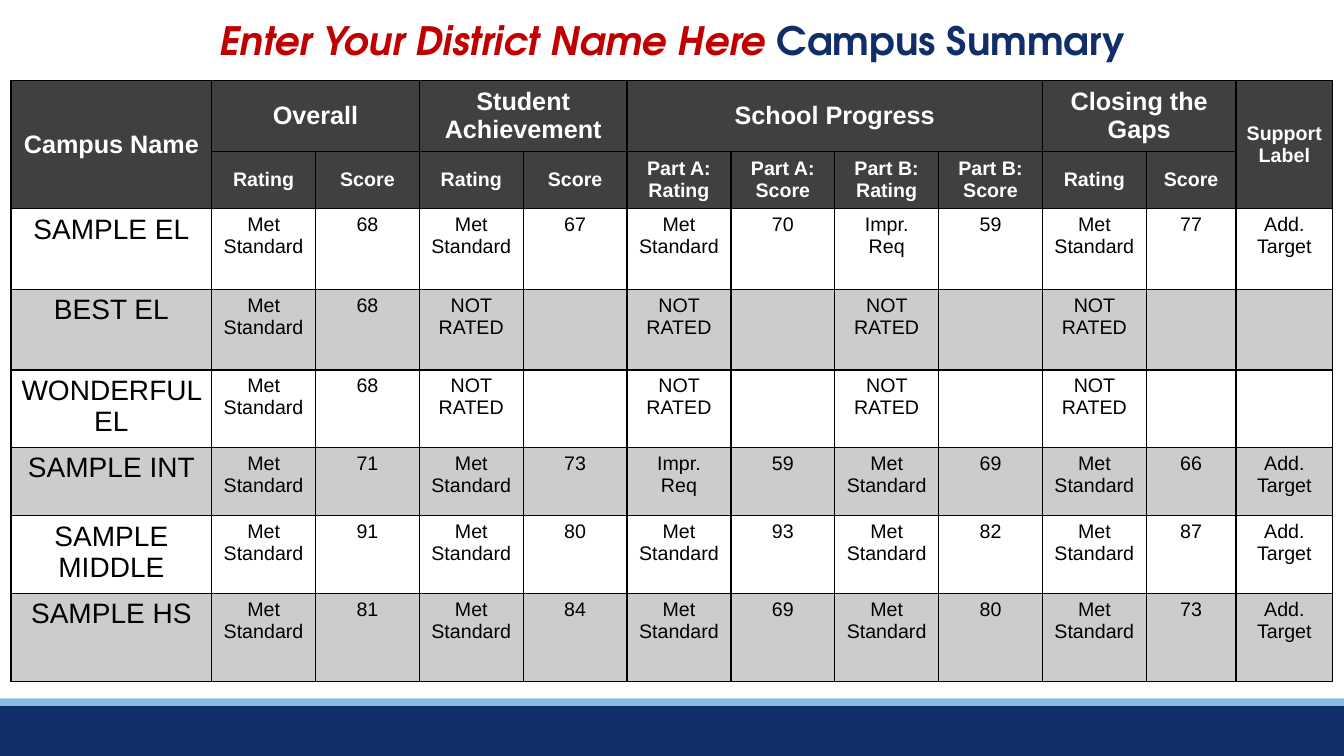
from lxml import etree
from pptx import Presentation
from pptx.dml.color import RGBColor
from pptx.enum.shapes import MSO_SHAPE
from pptx.enum.text import MSO_ANCHOR, PP_ALIGN
from pptx.oxml.ns import qn
from pptx.util import Inches, Pt

RECTANGLE = MSO_SHAPE.RECTANGLE
CENTER = PP_ALIGN.CENTER
TOP, MIDDLE, BOTTOM = MSO_ANCHOR.TOP, MSO_ANCHOR.MIDDLE, MSO_ANCHOR.BOTTOM

NAVY = RGBColor(0x0F, 0x2E, 0x6A)
SKY = RGBColor(0x88, 0xBC, 0xE3)
RED = RGBColor(0xC0, 0x00, 0x00)
CHARCOAL = RGBColor(0x40, 0x40, 0x40)
GRAY = RGBColor(0xCC, 0xCC, 0xCC)
WHITE = RGBColor(0xFF, 0xFF, 0xFF)
BLACK = RGBColor(0x00, 0x00, 0x00)

MET, IMPROVE, UNRATED = "Met Standard", "Impr. Req", "NOT RATED"
TARGET = "Add. Target"
GROUPS = [
    ("Campus Name", 0, 2, 1),
    ("Overall", 1, 1, 2),
    ("Student Achievement", 3, 1, 2),
    ("School Progress", 5, 1, 4),
    ("Closing the Gaps", 9, 1, 2),
    ("Support Label", 11, 2, 1),
]
SUBHEADS = ["Rating", "Score"] * 2 + [
    "Part A: Rating", "Part A: Score", "Part B: Rating", "Part B: Score", "Rating", "Score"]
NOT_RATED = [UNRATED, ""] * 4 + [""]
CAMPUSES = [
    ["SAMPLE EL", MET, "68", MET, "67", MET, "70", IMPROVE, "59", MET, "77", TARGET],
    ["BEST EL", MET, "68"] + NOT_RATED,
    ["WONDERFUL EL", MET, "68"] + NOT_RATED,
    ["SAMPLE INT", MET, "71", MET, "73", IMPROVE, "59", MET, "69", MET, "66", TARGET],
    ["SAMPLE MIDDLE", MET, "91", MET, "80", MET, "93", MET, "82", MET, "87", TARGET],
    ["SAMPLE HS", MET, "81", MET, "84", MET, "69", MET, "80", MET, "73", TARGET],
]
COLUMN_WIDTHS = [1.99] + [1.03] * 9 + [0.89, 0.96]
ROW_HEIGHTS = [0.7, 0.57, 0.8, 0.8, 0.69, 0.68, 0.65, 0.88]


class CampusSlide:
    title_font = "TeX Gyre Adventor"
    table_font = "Arial"

    def __init__(self, presentation):
        self.slide = presentation.slides.add_slide(presentation.slide_layouts[6])

    def band(self, top, height, color):
        shape = self.slide.shapes.add_shape(
            RECTANGLE, 0, Inches(top), Inches(13.33), Inches(height))
        shape.shadow.inherit = False
        shape.fill.solid()
        shape.fill.fore_color.rgb = color
        shape.line.fill.background()

    def run(self, paragraph, text, font, size, color, bold=False, italic=False):
        run = paragraph.add_run()
        run.text = text
        run.font.name = font
        run.font.size = Pt(size)
        run.font.color.rgb = color
        run.font.bold = bold
        run.font.italic = italic

    def title(self, left, top, width, height, parts):
        shape = self.slide.shapes.add_textbox(
            Inches(left), Inches(top), Inches(width), Inches(height))
        frame = shape.text_frame
        frame.word_wrap = True
        frame.vertical_anchor = BOTTOM
        paragraph = frame.paragraphs[0]
        paragraph.alignment = CENTER
        paragraph.line_spacing = 0.7
        for text, color, italic in parts:
            self.run(paragraph, text, self.title_font, 27.9, color, True, italic)

    def table(self, left, top, widths, heights):
        table = self.slide.shapes.add_table(
            len(heights), len(widths), Inches(left), Inches(top),
            Inches(sum(widths)), Inches(sum(heights))).table
        for column, width in zip(table.columns, widths):
            column.width = Inches(width)
        for row, height in zip(table.rows, heights):
            row.height = Inches(height)
        for cell in table.iter_cells():
            self.borders(cell)
        return table

    def borders(self, cell):
        properties = cell._tc.get_or_add_tcPr()
        for side in ("a:lnL", "a:lnR", "a:lnT", "a:lnB"):
            line = etree.SubElement(properties, qn(side), w=str(Pt(1)))
            fill = etree.SubElement(line, qn("a:solidFill"))
            etree.SubElement(fill, qn("a:srgbClr"), val=str(BLACK))

    def cell(self, cell, text, size, color, fill, bold=False, anchor=TOP):
        cell.fill.solid()
        cell.fill.fore_color.rgb = fill
        cell.vertical_anchor = anchor
        paragraph = cell.text_frame.paragraphs[0]
        paragraph.alignment = CENTER
        if text:
            self.run(paragraph, text, self.table_font, size, color, bold)

    def header(self, cell, text, size):
        self.cell(cell, text, size, WHITE, CHARCOAL, True, MIDDLE)


def main():
    presentation = Presentation()
    presentation.slide_width = Inches(13.33)
    presentation.slide_height = Inches(7.5)
    summary = CampusSlide(presentation)
    summary.band(7, 0.5, NAVY)
    summary.band(6.93, 0.07, SKY)
    summary.title(1.87, -0.07, 9.6, 0.74, [
        ("Enter Your District Name Here ", RED, True),
        ("Campus Summary", NAVY, False),
    ])

    table = summary.table(0.11, 0.8, COLUMN_WIDTHS, ROW_HEIGHTS)
    for text, column, row_span, column_span in GROUPS:
        cell = table.cell(0, column)
        if row_span * column_span > 1:
            cell.merge(table.cell(row_span - 1, column + column_span - 1))
        summary.header(cell, text, 14 if text == "Support Label" else 18)
    for column, text in enumerate(SUBHEADS, 1):
        summary.header(table.cell(1, column), text, 14)
    for row, campus in enumerate(CAMPUSES, 2):
        for column, text in enumerate(campus):
            summary.cell(table.cell(row, column), text, 14 if column else 20,
                         BLACK, GRAY if row % 2 else WHITE)

    presentation.save("out.pptx")


if __name__ == "__main__":
    main()
